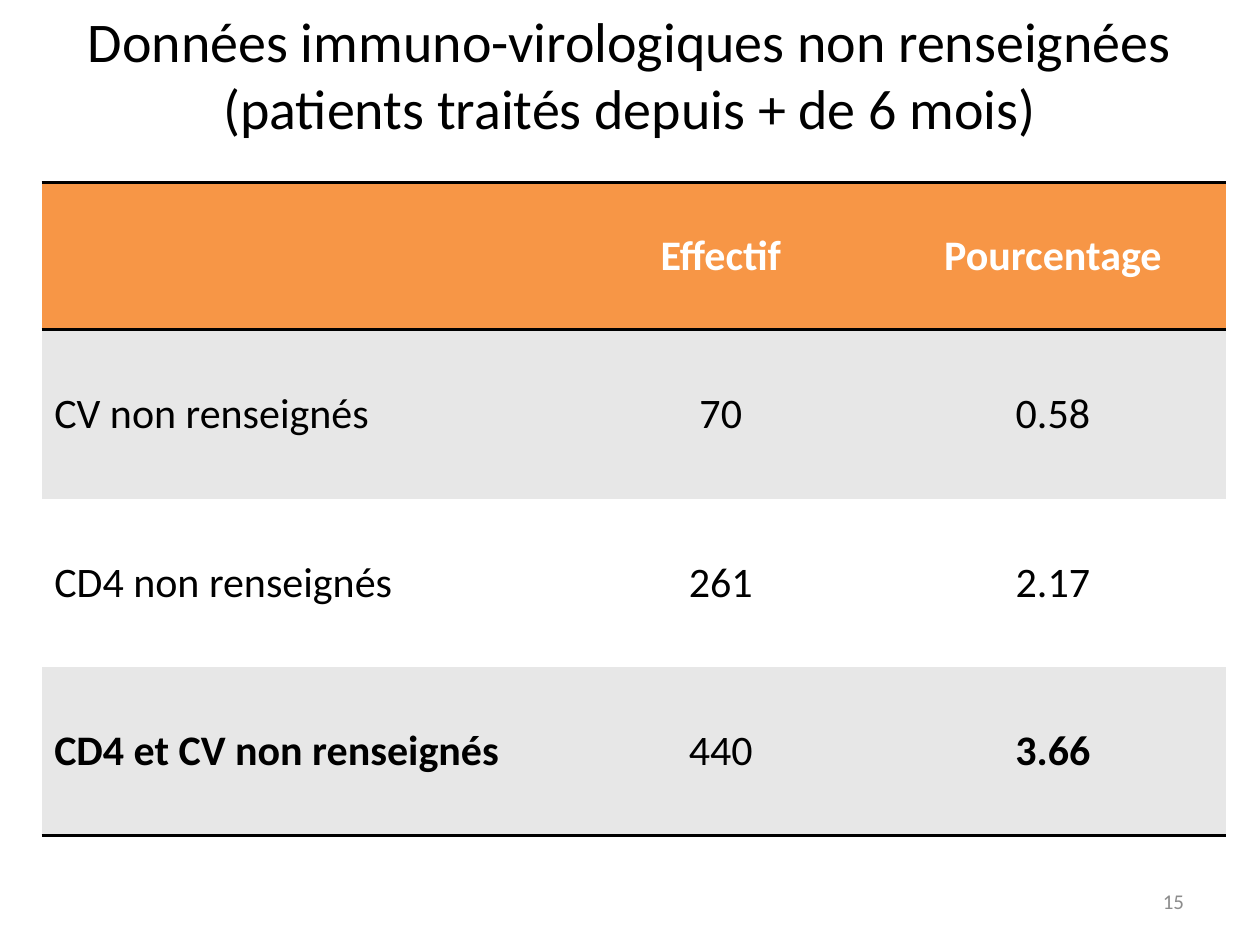
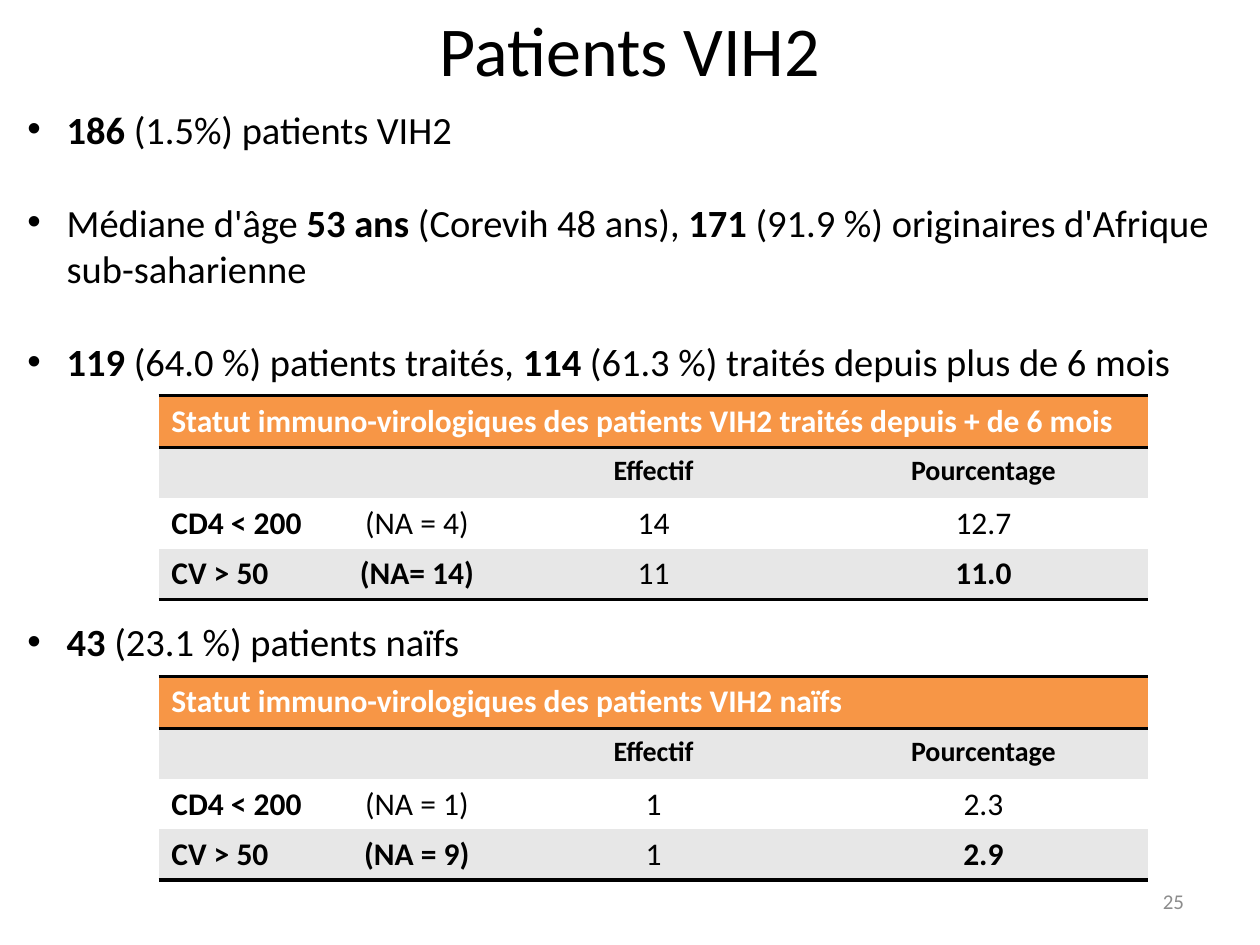
"""Build two slides of immuno-virological results with shared titles, tables and page numbers."""
from dataclasses import dataclass

from lxml import etree
from pptx import Presentation
from pptx import util as u
from pptx.dml.color import RGBColor
from pptx.enum import text
from pptx.oxml.ns import qn


@dataclass(frozen=True)
class Theme:
    font: str = "Calibri"
    ink: str = "000000"
    paper: str = "FFFFFF"
    accent: str = "F79646"
    band: str = "E7E7E7"
    muted: str = "8C8C8C"
    long_title: int = 32
    title: int = 40
    large_cell: int = 24
    body: int = 22
    cell: int = 18
    subheading: int = 16
    page: int = 12
    rule: int = 2
    plain_table: str = "{2D5ABB26-0587-4C30-8999-92F81FD0307C}"


theme = Theme()
LEFT, CENTER, RIGHT = text.PP_ALIGN.LEFT, text.PP_ALIGN.CENTER, text.PP_ALIGN.RIGHT


def add_runs(paragraph, marked_text, size, color=theme.ink, alignment=LEFT):
    """Add runs to a paragraph; pieces between asterisks are bold."""
    paragraph.alignment = alignment
    for index, piece in enumerate(marked_text.split("*")):
        if piece:
            run = paragraph.add_run()
            run.text = piece
            run.font.name = theme.font
            run.font.size = u.Pt(size)
            run.font.bold = index % 2 == 1
            run.font.color.rgb = RGBColor.from_string(color)


def add_data_table(slide, position, columns, heights, rows, sizes, anchor):
    """Add a banded table with rules around its header and below its last row."""
    frame = slide.shapes.add_table(len(rows), len(columns), u.Cm(position[0]), u.Cm(position[1]),
                                   u.Cm(sum(columns)), u.Cm(sum(heights)))
    frame.element.find(".//" + qn("a:tableStyleId")).text = theme.plain_table
    table = frame.table
    table.first_row = table.horz_banding = False
    for column, width in zip(table.columns, columns):
        column.width = u.Cm(width)
    for row_index, (row, height, size) in enumerate(zip(rows, heights, sizes)):
        table.rows[row_index].height = u.Cm(height)
        header = row_index == 0
        edges = ["lnT", "lnB"] if header else ["lnB"] if row_index == len(rows) - 1 else []
        fill = theme.accent if header else theme.band if row_index % 2 else theme.paper
        for column_index, content in enumerate(row):
            cell = table.cell(row_index, column_index)
            cell.vertical_anchor = anchor
            properties = cell._tc.get_or_add_tcPr()
            for edge in edges:
                line = etree.SubElement(properties, qn("a:" + edge), w=str(u.Pt(theme.rule)))
                solid = etree.SubElement(line, qn("a:solidFill"))
                etree.SubElement(solid, qn("a:srgbClr"), val=theme.ink)
            cell.fill.solid()
            cell.fill.fore_color.rgb = RGBColor.from_string(fill)
            paragraph = cell.text_frame.paragraphs[0]
            add_runs(paragraph, content, size, theme.paper if header else theme.ink,
                     CENTER if column_index else LEFT)
            if "\t" in content:
                tabs = etree.SubElement(paragraph._p.get_or_add_pPr(), qn("a:tabLst"))
                etree.SubElement(tabs, qn("a:tab"), pos=str(u.Cm(4.95)), algn="ctr")
    return table


presentation = Presentation()
presentation.slide_width, presentation.slide_height = u.Cm(25.4), u.Cm(19.05)

slides = []
for layout, title, size, height, page in [
    (5, "Données immuno-virologiques non renseignées (patients traités depuis + de 6 mois)",
     theme.long_title, 3, "15"),
    (1, "Patients VIH2", theme.title, 1.95, "25"),
]:
    slide = presentation.slides.add_slide(presentation.slide_layouts[layout])
    shape = slide.shapes.title
    shape.left, shape.top = u.Cm(0), u.Cm(0)
    shape.width, shape.height = presentation.slide_width, u.Cm(height)
    shape.text_frame.auto_size = text.MSO_AUTO_SIZE.NONE
    shape.text_frame.vertical_anchor = text.MSO_ANCHOR.TOP
    add_runs(shape.text_frame.paragraphs[0], title, size, alignment=CENTER)
    number = slide.shapes.add_textbox(u.Cm(18.2), u.Cm(17.65), u.Cm(5.92), u.Cm(1.02))
    number.text_frame.word_wrap = True
    number.text_frame.vertical_anchor = text.MSO_ANCHOR.MIDDLE
    add_runs(number.text_frame.paragraphs[0], page, theme.page, theme.muted, RIGHT)
    slides.append(slide)
missing_data_slide, vih2_slide = slides

add_data_table(
    missing_data_slide, (0.84, 3.68), [10.49, 6.4, 6.99], [2.97, 3.4, 3.4, 3.4],
    [["", "*Effectif*", "*Pourcentage*"],
     ["CV non renseignés", "70", "0.58"],
     ["CD4 non renseignés", "261", "2.17"],
     ["*CD4 et CV non renseignés*", "440", "*3.66*"]],
    [theme.large_cell] * 4, text.MSO_ANCHOR.MIDDLE)

body = vih2_slide.placeholders[1]
body.left, body.top, body.width, body.height = u.Cm(0.3), u.Cm(2), u.Cm(24.6), u.Cm(17)
body.text_frame.auto_size = text.MSO_AUTO_SIZE.NONE
findings = [
    (0, "*186* (1.5%) patients VIH2"),
    (26.8, "Médiane d'âge *53 ans* (Corevih 48 ans), *171* (91.9 %) originaires d'Afrique "
           "sub-saharienne"),
    (26.8, "*119* (64.0 %) patients traités, *114* (61.3 %) traités depuis plus de 6 mois"),
    (134, "*43* (23.1 %) patients naïfs"),
]
for index, (gap, finding) in enumerate(findings):
    paragraph = body.text_frame.add_paragraph() if index else body.text_frame.paragraphs[0]
    add_runs(paragraph, finding, theme.body)
    paragraph.space_before = u.Pt(gap)
    indent = u.Cm(0.79)
    properties = paragraph._p.get_or_add_pPr()
    properties.set("marL", str(indent))
    properties.set("indent", str(-indent))

for top, group, low_cd4, high_load in [
    (7.98, "traités depuis + de 6 mois",
     ["*CD4 < 200*\t(NA = 4)", "14", "12.7"], ["*CV > 50\t(NA= 14)*", "11", "*11.0*"]),
    (13.64, "naïfs",
     ["*CD4 < 200*\t(NA = 1)", "1", "2.3"], ["*CV > 50\t(NA = 9)*", "1", "*2.9*"]),
]:
    heading = f"*Statut immuno-virologiques des patients VIH2 {group}*"
    status_table = add_data_table(
        vih2_slide, (3.2, top), [6.65] * 3, [1.04, 1.02, 1.02, 1.02],
        [[heading, "", ""], ["", "*Effectif*", "*Pourcentage*"], low_cd4, high_load],
        [theme.cell, theme.subheading, theme.cell, theme.cell], text.MSO_ANCHOR.TOP)
    status_table.cell(0, 0).merge(status_table.cell(0, 2))

presentation.save("out.pptx")
